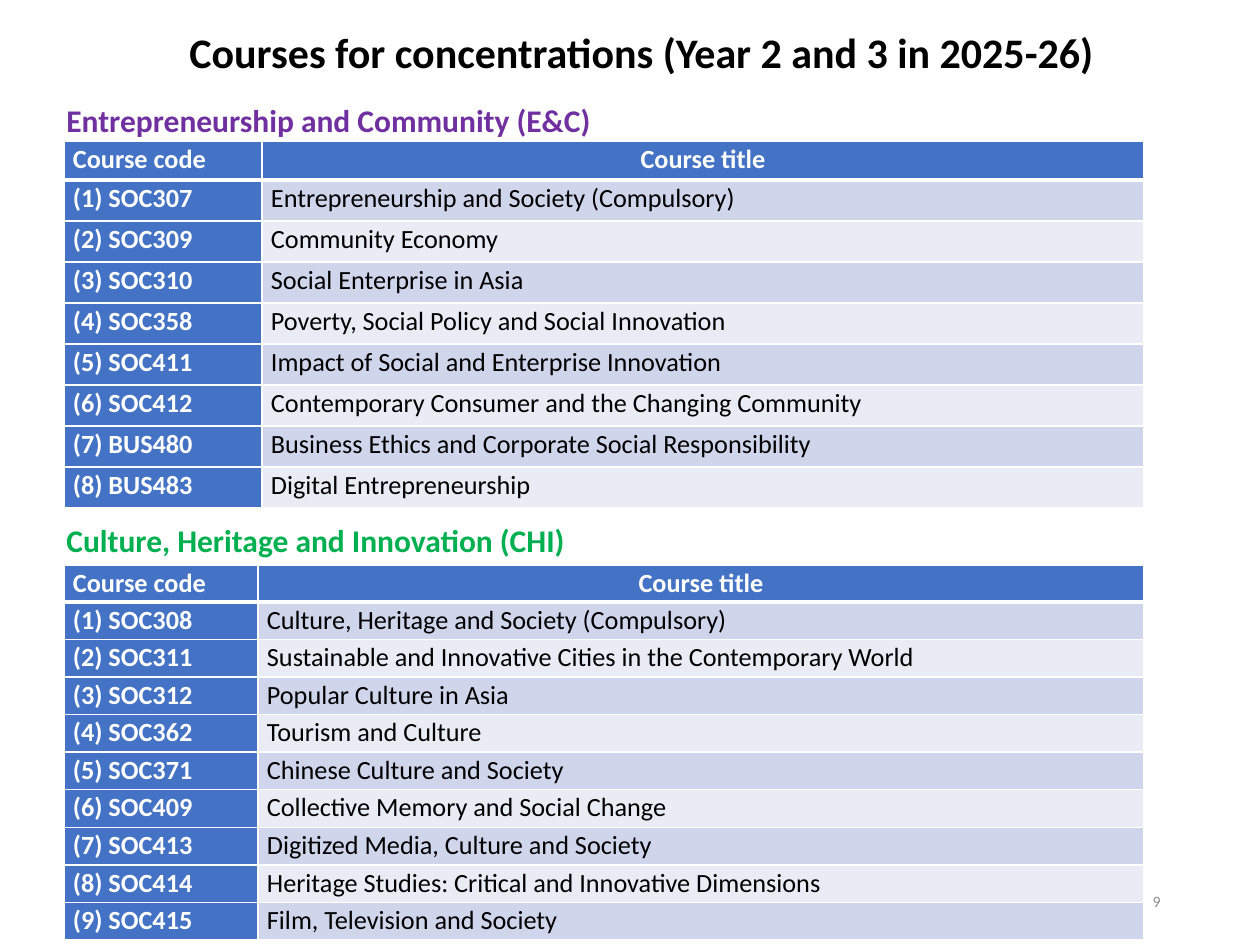
from lxml import etree
from pptx import Presentation
from pptx import util as u
from pptx.dml.color import RGBColor
from pptx.enum import text
from pptx.oxml.ns import qn

PX = u.Inches(1) / 126
FONT = "Calibri"
BLACK = RGBColor(0x00, 0x00, 0x00)
WHITE = RGBColor(0xFF, 0xFF, 0xFF)
GRAY = RGBColor(0x8C, 0x8C, 0x8C)
PURPLE = RGBColor(0x70, 0x30, 0xA0)
GREEN = RGBColor(0x00, 0xB0, 0x50)
BLUE = RGBColor(0x44, 0x72, 0xC4)
BANDS = (RGBColor(0xCF, 0xD5, 0xEA), RGBColor(0xE9, 0xEB, 0xF5))

TITLE = "Courses for concentrations (Year 2 and 3 in 2025-26)"
PAGE = "9"
HEADER = ("Course code", "Course title")
TABLE_LEFT, TABLE_WIDTH = 64, 1080

SECTIONS = [
    {
        "heading": "Entrepreneurship and Community (E&C)", "color": PURPLE,
        "heading_box": (54, 95, 1099, 50),
        "top": 141, "height": 367, "header_height": 39, "code_width": 198,
        "courses": [
            ("SOC307", "Entrepreneurship and Society (Compulsory)"),
            ("SOC309", "Community Economy"),
            ("SOC310", "Social Enterprise in Asia"),
            ("SOC358", "Poverty, Social Policy and Social Innovation"),
            ("SOC411", "Impact of Social and Enterprise Innovation"),
            ("SOC412", "Contemporary Consumer and the Changing Community"),
            ("BUS480", "Business Ethics and Corporate Social Responsibility"),
            ("BUS483", "Digital Entrepreneurship"),
        ],
    },
    {
        "heading": "Culture, Heritage and Innovation (CHI)", "color": GREEN,
        "heading_box": (54, 515, 895, 50),
        "top": 565, "height": 375, "header_height": 37, "code_width": 194,
        "courses": [
            ("SOC308", "Culture, Heritage and Society (Compulsory)"),
            ("SOC311", "Sustainable and Innovative Cities in the Contemporary World"),
            ("SOC312", "Popular Culture in Asia"),
            ("SOC362", "Tourism and Culture"),
            ("SOC371", "Chinese Culture and Society"),
            ("SOC409", "Collective Memory and Social Change"),
            ("SOC413", "Digitized Media, Culture and Society"),
            ("SOC414", "Heritage Studies: Critical and Innovative Dimensions"),
            ("SOC415", "Film, Television and Society"),
        ],
    },
]


def px(length):
    return u.Emu(round(length * PX))


def style(paragraph, size, color, bold):
    for run in paragraph.runs:
        run.font.name = FONT
        run.font.size = u.Pt(size)
        run.font.bold = bold
        run.font.color.rgb = color


def add_text(slide, box, words, size, color, bold=True):
    frame = slide.shapes.add_textbox(*map(px, box)).text_frame
    frame.word_wrap = True
    frame.text = words
    style(frame.paragraphs[0], size, color, bold)
    return frame


def set_borders(cell, top, bottom):
    """Draw white cell borders; top and bottom are widths in points."""
    properties = cell._tc.get_or_add_tcPr()
    sides = (("lnL", 1), ("lnR", 1), ("lnT", top), ("lnB", bottom))
    for position, (side, width) in enumerate(sides):
        line = etree.Element(qn(f"a:{side}"), w=str(u.Pt(width)))
        fill = etree.SubElement(line, qn("a:solidFill"))
        etree.SubElement(fill, qn("a:srgbClr"), val=str(WHITE))
        properties.insert(position, line)


def fill_cell(cell, words, row, column):
    is_label = row == 0 or column == 0
    cell.fill.solid()
    cell.fill.fore_color.rgb = BLUE if is_label else BANDS[(row - 1) % 2]
    cell.margin_left = cell.margin_right = px(9)
    cell.margin_top = cell.margin_bottom = 0
    cell.text = words
    paragraph = cell.text_frame.paragraphs[0]
    paragraph.line_spacing = 1.07
    paragraph.space_after = u.Pt(4)
    if row == 0 and column == 1:
        paragraph.alignment = text.PP_ALIGN.CENTER
    style(paragraph, 15, WHITE if is_label else BLACK, is_label)
    set_borders(cell, top=3 if row == 1 else 1, bottom=3 if row == 0 else 1)


def add_courses(slide, section):
    numbered = [(f"({number}) {code}", name)
                for number, (code, name) in enumerate(section["courses"], 1)]
    rows = [HEADER] + numbered
    table = slide.shapes.add_table(
        len(rows), len(HEADER), px(TABLE_LEFT), px(section["top"]),
        px(TABLE_WIDTH), px(section["height"])).table
    table.columns[0].width = px(section["code_width"])
    table.columns[1].width = px(TABLE_WIDTH - section["code_width"])
    row_height = (section["height"] - section["header_height"]) / len(numbered)
    for row, entries in enumerate(rows):
        table.rows[row].height = px(row_height if row else section["header_height"])
        for column, words in enumerate(entries):
            fill_cell(table.cell(row, column), words, row, column)


def main():
    deck = Presentation()
    deck.slide_width, deck.slide_height = px(1260), px(945)
    slide = deck.slides.add_slide(deck.slide_layouts[6])

    page = add_text(slide, (890, 876, 283, 50), PAGE, 9, GRAY, bold=False)
    page.vertical_anchor = text.MSO_ANCHOR.MIDDLE
    page.paragraphs[0].alignment = text.PP_ALIGN.RIGHT
    add_text(slide, (177, 20, 940, 64), TITLE, 24, BLACK)
    for section in SECTIONS:
        add_courses(slide, section)
        add_text(slide, section["heading_box"], section["heading"], 18, section["color"])

    deck.save("out.pptx")


if __name__ == "__main__":
    main()
